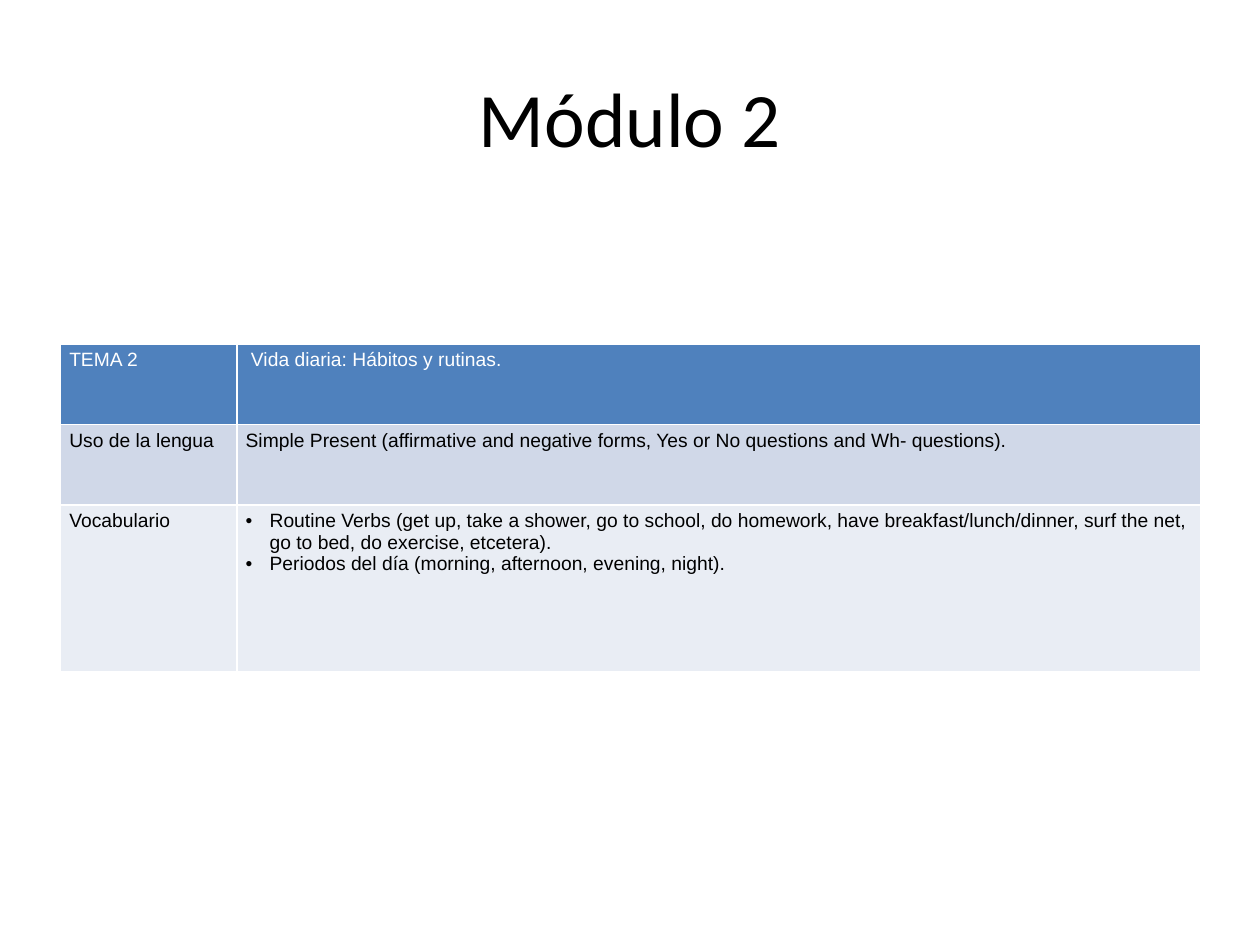
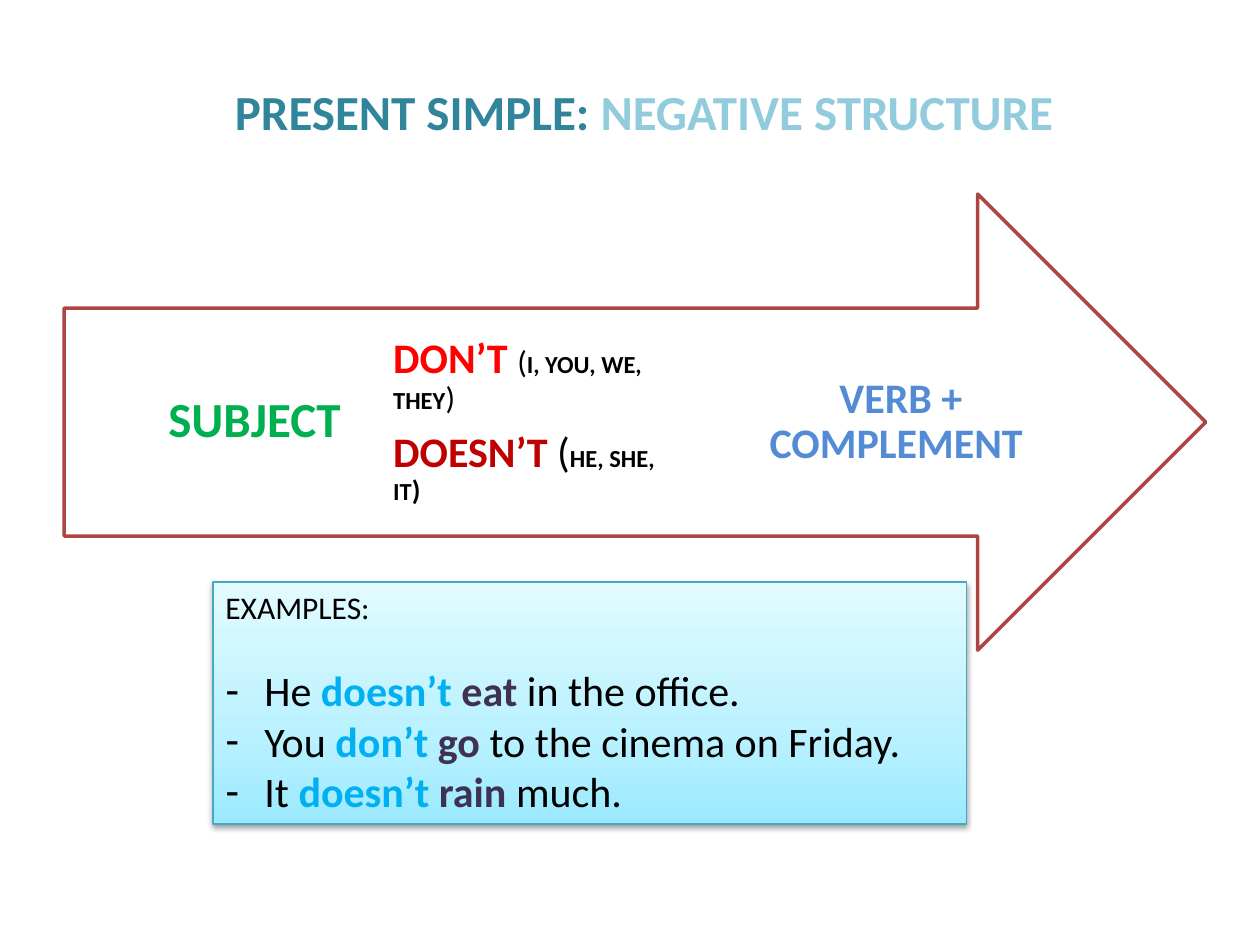
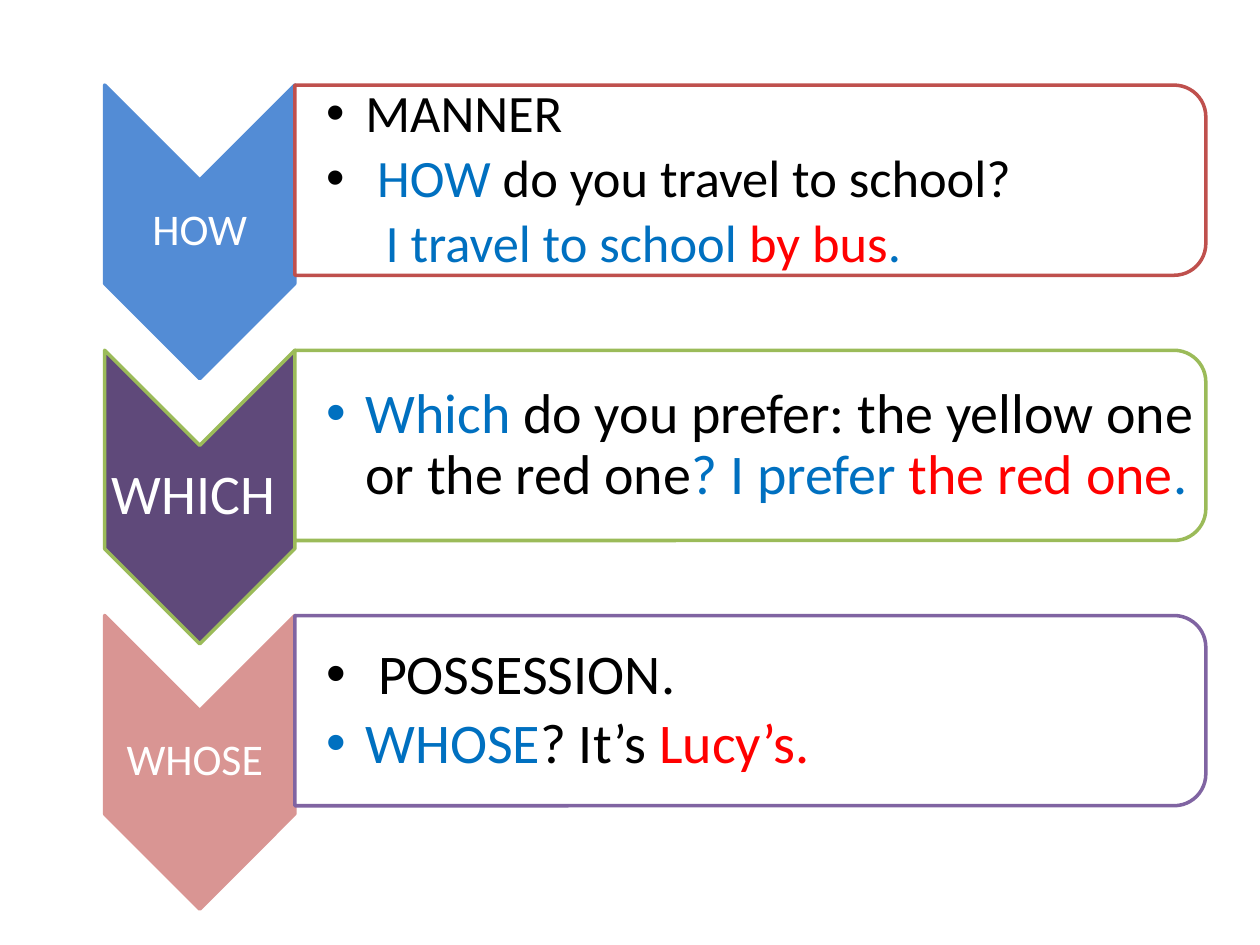
from copy import deepcopy
from dataclasses import dataclass

from lxml.etree import SubElement
from pptx import Presentation
from pptx.dml.color import RGBColor
from pptx.enum.shapes import MSO_SHAPE as Preset
from pptx.enum.text import MSO_ANCHOR as Anchor, MSO_AUTO_SIZE as AutoSize, PP_ALIGN as Align
from pptx.oxml.ns import qn
from pptx.util import Inches, Pt

BLACK = RGBColor(0x00, 0x00, 0x00)
WHITE = RGBColor(0xFF, 0xFF, 0xFF)
RED = RGBColor(0xFF, 0x00, 0x00)
DARK_RED = RGBColor(0xC0, 0x00, 0x00)
GREEN = RGBColor(0x00, 0xB0, 0x50)
BLUE = RGBColor(0x00, 0x70, 0xC0)
SKY = RGBColor(0x00, 0xB0, 0xF0)
STEEL = RGBColor(0x53, 0x8C, 0xD5)
PLUM = RGBColor(0x3F, 0x31, 0x51)
VIOLET = RGBColor(0x5F, 0x49, 0x7A)
LAVENDER = RGBColor(0x80, 0x64, 0xA2)
OLIVE = RGBColor(0x9B, 0xBB, 0x59)
ROSE = RGBColor(0xD9, 0x95, 0x93)
BRICK = RGBColor(0xBF, 0x50, 0x4D)
ARROW_EDGE = RGBColor(0xAD, 0x46, 0x43)
TEAL = RGBColor(0x31, 0x85, 0x9B)
PALE_TEAL = RGBColor(0x92, 0xCC, 0xDC)
EXAMPLES_EDGE = RGBColor(0x45, 0xA9, 0xC4)
EXAMPLES_GRADIENT = (
    (0, RGBColor(0x9B, 0xE9, 0xFF)),
    (0.35, RGBColor(0xB8, 0xF1, 0xFF)),
    (1, RGBColor(0xE2, 0xFB, 0xFF)),
)
ROW_FILLS = (
    RGBColor(0x4F, 0x81, 0xBD),
    RGBColor(0xD0, 0xD8, 0xE8),
    RGBColor(0xE9, 0xED, 0xF4),
)

CELL = 0.1
TITLE_ONLY, BLANK = 5, 6


@dataclass
class Box:
    """A region measured in grid columns and rows."""

    left: float
    top: float
    width: float
    height: float

    def region(self, left, top, width, height):
        """Return a region placed relative to this one."""
        return Box(self.left + left, self.top + top, width, height)

    def turned(self):
        """Return the frame that covers this region after a quarter turn."""
        shift = (self.width - self.height) / 2
        return Box(self.left + shift, self.top - shift, self.height, self.width)

    def place(self):
        """Return left, top, width and height as lengths."""
        return [Inches(n * CELL) for n in (self.left, self.top, self.width, self.height)]


@dataclass
class Line:
    """A paragraph whose runs are (text, colour, bold, size), the last two optional."""

    runs: list
    size: float
    bullet: str = ""
    hanging: float = 0.31
    indent: float = 0
    before: float = 0
    spacing: float = 0.9
    align: Align = Align.LEFT
    font: str = "Calibri"


SLIDE = Box(0, 0, 100, 75)


def add_bullet(paragraph, line):
    """Give the paragraph a hanging bullet in the colour of its first run."""
    properties = paragraph._p.get_or_add_pPr()
    hanging = Inches(line.hanging)
    properties.set("marL", str(hanging))
    properties.set("indent", str(-hanging))
    colour = SubElement(properties, qn("a:buClr"))
    SubElement(colour, qn("a:srgbClr"), val=str(line.runs[0][1]))
    SubElement(properties, qn("a:buFont"), typeface="Arial")
    SubElement(properties, qn("a:buChar"), char=line.bullet)


def write(frame, lines, insets=(0, 0, 0, 0), anchor=Anchor.MIDDLE):
    """Fill a text frame with lines."""
    frame.word_wrap = True
    frame.auto_size = AutoSize.NONE
    frame.vertical_anchor = anchor
    (frame.margin_left, frame.margin_top,
     frame.margin_right, frame.margin_bottom) = map(Inches, insets)
    write_lines(frame, lines)


def write_lines(frame, lines):
    """Write each line as one paragraph of the frame."""
    for index, line in enumerate(lines):
        paragraph = frame.add_paragraph() if index else frame.paragraphs[0]
        if line.bullet:
            add_bullet(paragraph, line)
        elif line.indent:
            paragraph._p.get_or_add_pPr().set("marL", str(Inches(line.indent)))
        paragraph.alignment = line.align
        paragraph.line_spacing = line.spacing
        paragraph.space_before = Pt(line.before)
        paragraph.font.name = line.font
        paragraph.font.size = Pt(line.size)
        for text, colour, *style in line.runs:
            run = paragraph.add_run()
            run.text = text
            run.font.color.rgb = colour
            run.font.bold = bool(style and style[0])
            if len(style) > 1:
                run.font.size = Pt(style[1])


def add_text(slide, box, lines, insets=(0, 0, 0, 0)):
    """Add a text box with middle-anchored lines."""
    write(slide.shapes.add_textbox(*box.place()).text_frame, lines, insets)


def add_preset(slide, preset, box, fill, edge, adjustments=(), turned=False):
    """Add a filled and outlined preset shape, optionally turned clockwise."""
    shape = slide.shapes.add_shape(preset, *(box.turned() if turned else box).place())
    shape.rotation = 90 if turned else 0
    for index, value in enumerate(adjustments):
        shape.adjustments[index] = value
    shape.fill.solid()
    shape.fill.fore_color.rgb = fill
    shape.line.color.rgb = edge
    shape.line.width = Pt(2)
    shape.shadow.inherit = False
    return shape


def add_title(slide, box, line, insets, anchor=Anchor.MIDDLE):
    """Move the title placeholder to the box and write its line."""
    title = slide.shapes.title
    title.left, title.top, title.width, title.height = box.place()
    write(title.text_frame, [line], insets, anchor)


def add_topic_table(slide, box, rows):
    """Add the table of topic, language use and vocabulary."""
    table = slide.shapes.add_table(len(rows), 2, *box.place()).table
    for column, width in zip(table.columns, (14, box.width - 14)):
        column.width = Inches(width * CELL)
    for row, height in zip(table.rows, (6.4, 6.4, box.height - 12.8)):
        row.height = Inches(height * CELL)
    for row, (texts, fill) in enumerate(zip(rows, ROW_FILLS)):
        colour = BLACK if row else WHITE
        for column, entry in enumerate(texts):
            cell = table.cell(row, column)
            cell.fill.solid()
            cell.fill.fore_color.rgb = fill
            cell.margin_left = cell.margin_right = Inches(0.07)
            cell.margin_top = cell.margin_bottom = Inches(0.04)
            items = [entry] if isinstance(entry, str) else entry
            bullet = "" if isinstance(entry, str) else "•"
            write_lines(cell.text_frame, [
                Line([(item, colour)], 11, bullet, hanging=0.19, spacing=1, font="Arial")
                for item in items
            ])


def add_structure_arrow(slide, box):
    """Add the arrow that shows the order of a negative sentence."""
    add_preset(slide, Preset.RIGHT_ARROW, box, WHITE, ARROW_EDGE, (0.5, 0.5))
    auxiliaries = [
        Line([("DON’T ", RED, True), ("(", BLACK, False, 18),
              ("I, YOU, WE, THEY", BLACK, True, 14), (")", BLACK, False, 18)], 24),
        Line([("DOESN’T ", DARK_RED, True), ("(", BLACK),
              ("HE, SHE, IT", BLACK, True, 14), (")", BLACK, True, 16)], 24, before=8.4),
    ]
    verb = [Line([("VERB + COMPLEMENT ", STEEL, True)], 24, align=Align.CENTER)]
    subject = [Line([("SUBJECT", GREEN, True)], 28, align=Align.CENTER)]
    for left, width, lines in ((51.3, 30.2, verb), (26.1, 22.1, auxiliaries), (7.3, 15.6, subject)):
        add_text(slide, box.region(left, box.height / 4, width, box.height / 2), lines)


def add_examples(slide, box, sentences):
    """Add the shaded panel of example sentences."""
    panel = add_preset(slide, Preset.RECTANGLE, box, WHITE, EXAMPLES_EDGE)
    panel.line.width = Pt(0.75)
    panel.fill.gradient()
    panel.fill.gradient_angle = 90
    properties = panel._element.spPr
    stop_list = properties.find(".//" + qn("a:gsLst"))
    stop_list.insert(1, deepcopy(stop_list[0]))
    for stop, (position, colour) in zip(panel.fill.gradient_stops, EXAMPLES_GRADIENT):
        stop.position = position
        stop.color.rgb = colour
    shadow = SubElement(properties.find(qn("a:effectLst")), qn("a:outerShdw"),
                        blurRad=str(Pt(3.1)), dist=str(Pt(1.6)), dir="5400000", rotWithShape="0")
    SubElement(SubElement(shadow, qn("a:srgbClr"), val=str(BLACK)), qn("a:alpha"), val="38000")
    lines = [Line([("EXAMPLES:", BLACK)], 18, spacing=1)]
    for index, (subject, auxiliary, verb, rest) in enumerate(sentences):
        runs = [(subject, BLACK), (auxiliary, SKY, True), (verb, PLUM, True), (rest, BLACK)]
        lines.append(Line(runs, 24, "-", before=0 if index else 22, spacing=1))
    write(panel.text_frame, lines, (0.1, 0.05, 0.1, 0.05), Anchor.TOP)


def add_question_word(slide, box, word, size, fill, chevron_edge, panel_edge, lines):
    """Add a chevron with a question word and the panel that explains it."""
    tab = 15.1
    panel_width = box.width - tab
    add_preset(slide, Preset.CHEVRON, box.region(0, 0, tab, box.height),
               fill, chevron_edge, (0.5,), turned=True)
    add_text(slide, box.region(0, 8.1, tab, 7),
             [Line([(word, WHITE)], size, align=Align.CENTER)], (0.02,) * 4)
    add_preset(slide, Preset.ROUND_2_SAME_RECTANGLE, box.region(tab, 0, panel_width, tab),
               WHITE, panel_edge, (0.167, 0), turned=True)
    add_text(slide, box.region(tab, 0.75, panel_width - 0.7, tab - 1.4),
             lines, (0.25, 0.02, 0.02, 0.02))


def build_module(deck):
    """Build the slide that outlines the module."""
    slide = deck.slides.add_slide(deck.slide_layouts[TITLE_ONLY])
    add_title(slide, SLIDE.region(5, 3, 90, 12.5),
              Line([("Módulo 2", BLACK)], 44, spacing=1, align=Align.CENTER), (0.1,) * 4)
    add_topic_table(slide, SLIDE.region(4.8, 27.3, 90.5, 26), [
        ("TEMA 2", " Vida diaria: Hábitos y rutinas."),
        ("Uso de la lengua",
         "Simple Present (affirmative and negative forms, Yes or No questions and Wh- questions)."),
        ("Vocabulario", [
            "Routine Verbs (get up, take a shower, go to school, do homework, have "
            "breakfast/lunch/dinner, surf the net, go to bed, do exercise, etcetera).",
            "Periodos del día (morning, afternoon, evening, night).",
        ]),
    ])


def build_negative_structure(deck):
    """Build the slide on negative sentences."""
    slide = deck.slides.add_slide(deck.slide_layouts[TITLE_ONLY])
    heading = [("PRESENT SIMPLE: ", TEAL, True), ("NEGATIVE STRUCTURE ", PALE_TEAL, True)]
    add_title(slide, SLIDE.region(16.9, 6, 69.3, 5.7),
              Line(heading, 28, spacing=1, align=Align.CENTER),
              (0.1, 0.05, 0.1, 0.05), Anchor.TOP)
    add_structure_arrow(slide, SLIDE.region(5.1, 15.4, 90.6, 36.2))
    add_examples(slide, SLIDE.region(16.9, 46.2, 59.8, 19.2), [
        ("He ", "doesn’t ", "eat", " in the office."),
        ("You ", "don’t ", "go", " to the cinema on Friday."),
        ("It ", "doesn’t ", "rain", " much."),
    ])


def build_question_words(deck):
    """Build the slide on question words."""
    slide = deck.slides.add_slide(deck.slide_layouts[BLANK])
    how = [
        Line([("MANNER", BLACK)], 30, "•"),
        Line([(" ", BLACK), ("HOW ", BLUE), ("do you travel to school?", BLACK)],
             30, "•", before=4.8),
        Line([("I travel to school ", BLUE), ("by bus", RED), (".", BLUE)],
             30, indent=0.47, before=4.8),
    ]
    which = [
        Line([("Which ", BLUE), ("do you prefer: the yellow one or the red one", BLACK),
              ("? I prefer ", BLUE), ("the red one", RED), (".", BLUE)], 32, "•", before=4.8),
    ]
    whose = [
        Line([(" POSSESSION.", BLACK)], 32, "•"),
        Line([("WHOSE", BLUE), ("? It’s ", BLACK), ("Lucy’s.", RED)], 32, "•", before=4.8),
    ]
    words = (
        ("HOW", 25, STEEL, STEEL, BRICK, how),
        ("WHICH ", 32, VIOLET, OLIVE, OLIVE, which),
        ("WHOSE ", 25, ROSE, ROSE, LAVENDER, whose),
    )
    for index, word in enumerate(words):
        add_question_word(slide, SLIDE.region(8.3, 6.75 + 21.05 * index, 87.4, 23.3), *word)


def main():
    """Build and save the deck."""
    deck = Presentation()
    deck.slide_width, deck.slide_height = SLIDE.place()[2:]
    for build in (build_module, build_negative_structure, build_question_words):
        build(deck)
    deck.save("out.pptx")


if __name__ == "__main__":
    main()
